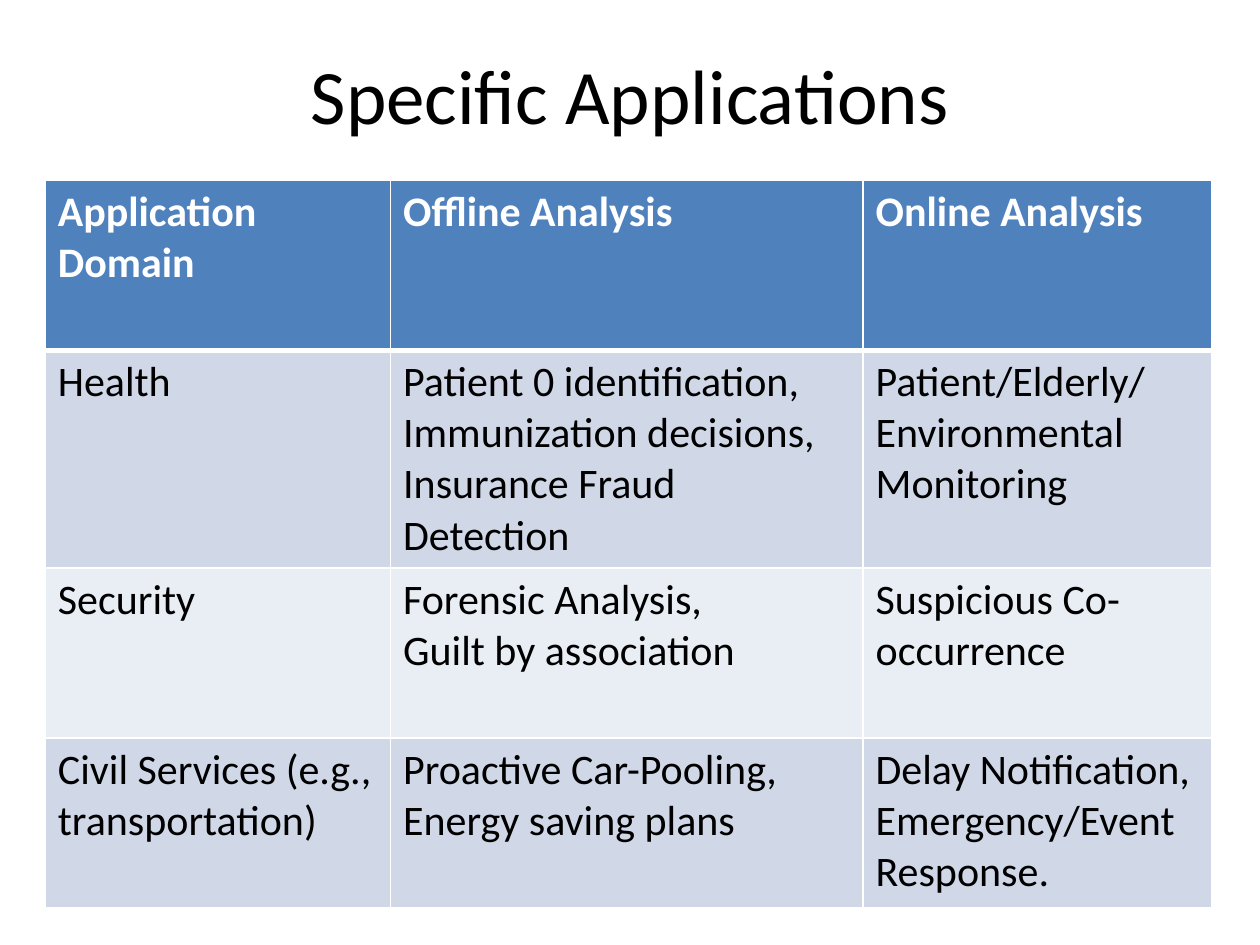
from lxml.etree import SubElement
from pptx import Presentation
from pptx.dml.color import RGBColor
from pptx.enum.text import MSO_ANCHOR, PP_ALIGN
from pptx.oxml.ns import qn
from pptx.util import Inches, Pt


def color(hex_string):
    return RGBColor.from_string(hex_string)


def write_text(frame, text, size=24, fill="000000", bold=False, align=PP_ALIGN.LEFT):
    frame.text = text
    for paragraph in frame.paragraphs:
        paragraph.alignment = align
        for run in paragraph.runs:
            run.font.name = "Calibri"
            run.font.size = Pt(size)
            run.font.bold = bold
            run.font.color.rgb = color(fill)


presentation = Presentation()
presentation.slide_width = Inches(10)
presentation.slide_height = Inches(7.5)
slide = presentation.slides.add_slide(presentation.slide_layouts[5])

# Title
title = slide.shapes.title
title.left, title.top = Inches(0.5), Inches(0.12)
title.width, title.height = Inches(9), Inches(1.25)
title.text_frame.vertical_anchor = MSO_ANCHOR.MIDDLE
write_text(title.text_frame, "Specific Applications", size=44, align=PP_ALIGN.CENTER)

# Table contents and grid
applications = [
    ["Application Domain", "Offline Analysis", "Online Analysis"],
    ["Health",
     "Patient 0 identification, Immunization decisions, Insurance Fraud Detection",
     "Patient/Elderly/ Environmental Monitoring"],
    ["Security", "Forensic Analysis,\nGuilt by association", "Suspicious Co-occurrence"],
    ["Civil Services (e.g., transportation)",
     "Proactive Car-Pooling, Energy saving plans",
     "Delay Notification, Emergency/Event Response."],
]
column_widths = [2.74, 3.75, 2.77]
row_height = 1.35
row_fills = ["4F81BD", "D0D8E8", "E9EDF4", "D0D8E8"]

table = slide.shapes.add_table(
    len(applications), len(column_widths), Inches(0.36), Inches(1.43),
    Inches(sum(column_widths)), Inches(row_height * len(applications))).table
for column, width in zip(table.columns, column_widths):
    column.width = Inches(width)

# Cells: white borders, thicker under the header
for row_index, texts in enumerate(applications):
    table.rows[row_index].height = Inches(row_height)
    is_header = row_index == 0
    border_widths = {"a:lnL": 1, "a:lnR": 1,
                     "a:lnT": 3 if row_index == 1 else 1,
                     "a:lnB": 3 if is_header else 1}
    for column_index, text in enumerate(texts):
        cell = table.cell(row_index, column_index)
        write_text(cell.text_frame, text, bold=is_header,
                   fill="FFFFFF" if is_header else "000000")
        properties = cell._tc.get_or_add_tcPr()
        for tag, width in border_widths.items():
            line = SubElement(properties, qn(tag), w=str(Pt(width)))
            line_fill = SubElement(line, qn("a:solidFill"))
            SubElement(line_fill, qn("a:srgbClr"), val="FFFFFF")
        cell.fill.solid()
        cell.fill.fore_color.rgb = color(row_fills[row_index])

presentation.save("out.pptx")
